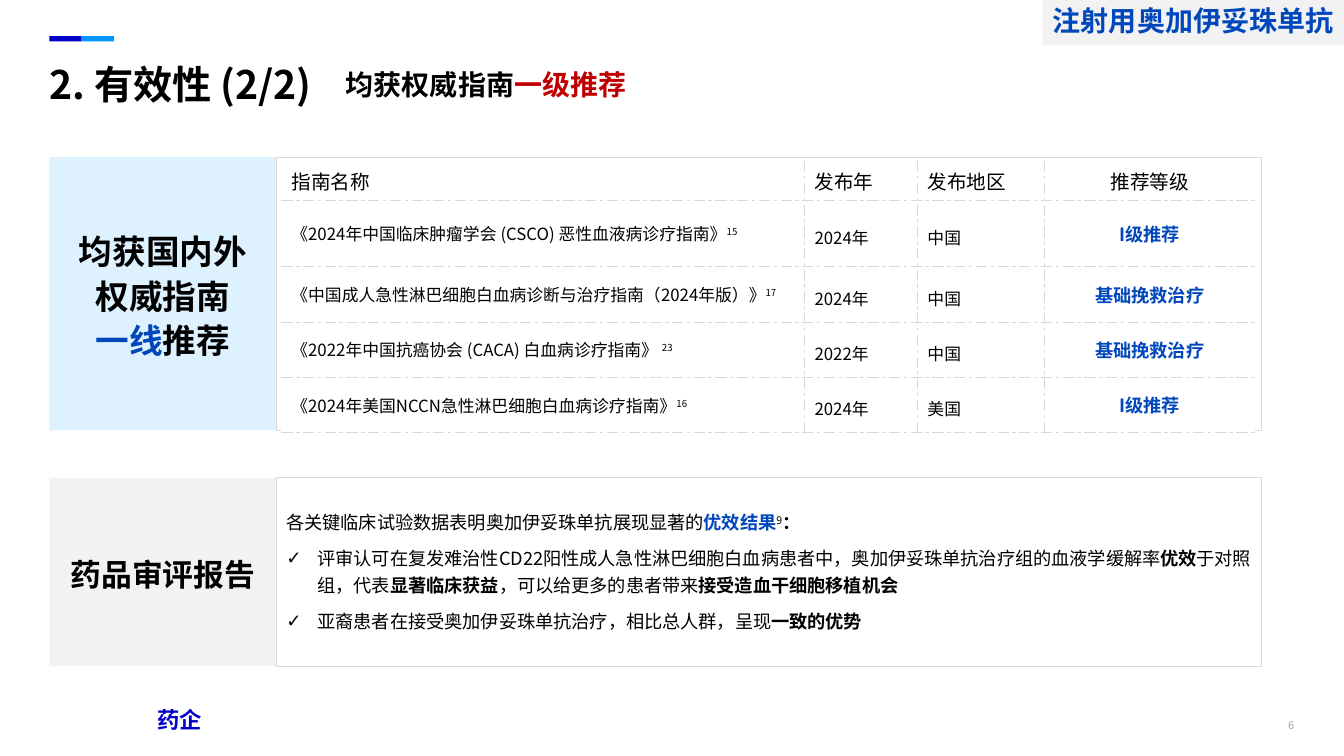
from dataclasses import dataclass
from typing import NamedTuple, Optional

from lxml.etree import SubElement
from pptx import Presentation
from pptx.dml.color import RGBColor
from pptx.enum.shapes import MSO_SHAPE as Shape
from pptx.enum.text import MSO_ANCHOR as Anchor, MSO_AUTO_SIZE as Fit, PP_ALIGN as Align
from pptx.oxml import parse_xml
from pptx.oxml.ns import nsdecls, qn
from pptx.util import Inches, Pt

HUES = {
    "ink": "000000", "blue": "0047BB", "red": "C00000", "deep": "0000C9",
    "sky": "0095FF", "pale": "DDF1FF", "grey": "F2F2F2", "line": "D9D9D9",
    "white": "FFFFFF", "dim": "A1AAB1",
}
HAN = "Noto Sans CJK SC"
WIDE, HIGH = Inches(13.33), Inches(7.5)


class Box(NamedTuple):
    """Left, top, width and height in percent of the slide."""
    x: float
    y: float
    w: float
    h: float

    def emu(self) -> tuple:
        return across(self.x), down(self.y), across(self.w), down(self.h)


class Run(NamedTuple):
    text: str
    size: float
    hue: str = "ink"
    bold: bool = False
    raised: bool = False
    face: str = HAN


@dataclass
class Para:
    runs: list
    align: Align = Align.LEFT
    space: float = 1.0
    before: float = 0
    mark: str = ""


@dataclass
class Panel:
    box: Box
    fill: str
    paras: tuple = ()
    line: Optional[str] = None
    side: float = 0.1


class Guide(NamedTuple):
    name: str
    note: str
    year: str
    place: str
    grade: str


def across(share: float) -> int:
    return round(WIDE * share / 100)


def down(share: float) -> int:
    return round(HIGH * share / 100)


def rgb(hue: str) -> RGBColor:
    return RGBColor.from_string(HUES[hue])


def write(frame, paras, anchor=Anchor.TOP, side: float = 0.1, edge: float = 0.05) -> None:
    frame.word_wrap = True
    frame.auto_size = Fit.NONE
    frame.vertical_anchor = anchor
    frame.margin_left = frame.margin_right = Inches(side)
    frame.margin_top = frame.margin_bottom = Inches(edge)
    fill_text(frame, paras)


def fill_text(frame, paras) -> None:
    for i, para in enumerate(paras):
        line = frame.add_paragraph() if i else frame.paragraphs[0]
        props = line._p.get_or_add_pPr()
        dent = Inches(0.31) if para.mark else 0
        props.set("marL", str(dent))
        props.set("indent", str(-dent))
        if para.mark:
            SubElement(props, qn("a:buChar")).set("char", para.mark)
        else:
            SubElement(props, qn("a:buNone"))
        line.alignment = para.align
        line.line_spacing = para.space
        line.space_before = Pt(para.before)
        for item in para.runs:
            add_run(line, item)


def add_run(line, item: Run) -> None:
    run = line.add_run()
    run.text = item.text
    font = run.font
    font.size, font.bold, font.name = Pt(item.size), item.bold, item.face
    font.color.rgb = rgb(item.hue)
    props = run._r.get_or_add_rPr()
    SubElement(props, qn("a:ea")).set("typeface", item.face)
    if item.raised:
        props.set("baseline", "30000")


def paint(shape, fill: str, line: Optional[str]) -> None:
    shape.fill.solid()
    shape.fill.fore_color.rgb = rgb(fill)
    if line:
        shape.line.color.rgb = rgb(line)
        shape.line.width = Pt(0.5)
    else:
        shape.line.fill.background()


def draw(slide, panel: Panel) -> None:
    shape = slide.shapes.add_shape(Shape.RECTANGLE, *panel.box.emu())
    shape.shadow.inherit = False
    paint(shape, panel.fill, panel.line)
    if panel.paras:
        write(shape.text_frame, panel.paras, Anchor.MIDDLE, panel.side)


def label(slide, box: Box, para: Para, anchor=Anchor.TOP, pad: float = 0.05) -> None:
    write(slide.shapes.add_textbox(*box.emu()).text_frame, [para], anchor, pad, pad)


def place(holder, box: Box) -> None:
    holder.left, holder.top, holder.width, holder.height = box.emu()


def rule(cell, shown: dict) -> None:
    """Draw dashed borders on the shown sides and clear the others."""
    props = cell._tc.get_or_add_tcPr()
    for i, (side, on) in enumerate(shown.items()):
        ink = (f'<a:solidFill><a:srgbClr val="{HUES["line"]}"/></a:solidFill>'
               '<a:prstDash val="sysDashDot"/>') if on else "<a:noFill/>"
        props.insert(i, parse_xml(f'<a:ln{side} {nsdecls("a")} w="6350">{ink}</a:ln{side}>'))


def guide_paras(guide: Guide) -> list:
    return [
        Para([Run(guide.name, 12), Run(guide.note, 12, raised=True)]),
        Para([Run(guide.year, 12)], space=1.3),
        Para([Run(guide.place, 12)], space=1.3),
        Para([Run(guide.grade, 13, "blue", True)], Align.CENTER),
    ]


def add_guides(slide, box: Box, cols: list, rows: list, heads: list, guides: list) -> None:
    grid = slide.shapes.add_table(len(rows), len(cols), *box.emu()).table
    grid.first_row = grid.horz_banding = False
    for col, share in zip(grid.columns, cols):
        col.width = across(share)
    for row, share in zip(grid.rows, rows):
        row.height = down(share)
    last = len(cols) - 1
    top = [Para([Run(head, 14)], Align.CENTER if c == last else Align.LEFT)
           for c, head in enumerate(heads)]
    for r, paras in enumerate([top] + [guide_paras(g) for g in guides]):
        for c, para in enumerate(paras):
            cell = grid.cell(r, c)
            cell.fill.solid()
            cell.fill.fore_color.rgb = rgb("white")
            cell.vertical_anchor = Anchor.MIDDLE
            if r and c == last:
                cell.margin_left = cell.margin_right = Inches(0.04)
                cell.margin_top = cell.margin_bottom = Inches(0.04)
            fill_text(cell.text_frame, [para])
            rule(cell, {"L": c > 0, "R": c < last, "T": r > 0, "B": True})


def main() -> None:
    deck = Presentation()
    deck.slide_width, deck.slide_height = WIDE, HIGH
    slide = deck.slides.add_slide(deck.slide_layouts[1])
    left, mid, tab, body = 3.68, 20.55, 16.87, 73.3
    upper, lower = (20.8, 36.13), (63.2, 24.93)

    title, review = slide.shapes.title, slide.placeholders[1]
    place(title, Box(left, 8.27, 94.75, 6.4))
    write(title.text_frame, [Para([Run("2. 有效性 (2/2)", 28, bold=True)], space=0.85)], side=0)
    place(review, Box(mid, lower[0], body, lower[1]))
    paint(review, "white", "line")
    write(review.text_frame, [
        Para([Run("各关键临床试验数据表明奥加伊妥珠单抗展现显著的", 13),
              Run("优效结果", 13, "blue", True), Run("9", 13, raised=True),
              Run("：", 13, bold=True)]),
        Para([Run("评审认可在复发难治性CD22阳性成人急性淋巴细胞白血病患者中，"
                  "奥加伊妥珠单抗治疗组的血液学缓解率", 13),
              Run("优效", 13, bold=True), Run("于对照组，代表", 13),
              Run("显著临床获益", 13, bold=True), Run("，可以给更多的患者带来", 13),
              Run("接受造血干细胞移植机会", 13, bold=True)], space=1.25, before=6, mark="✓"),
        Para([Run("亚裔患者在接受奥加伊妥珠单抗治疗，相比总人群，呈现", 13),
              Run("一致的优势", 13, bold=True)], space=1.25, before=6, mark="✓"),
    ], Anchor.MIDDLE)

    claim = [[Run("均获国内外", 24, bold=True)], [Run("权威指南", 24, bold=True)],
             [Run("一线", 24, "blue", True), Run("推荐", 24, bold=True)]]
    drug = Para([Run("注射用奥加伊妥珠单抗", 20, "blue", True)], Align.CENTER, 0.9)
    report = Para([Run("药品审评报告", 22, bold=True)], Align.CENTER, 1.1)
    for panel in (
        Panel(Box(left, 4.8, 2.4, 0.67), "deep"),
        Panel(Box(left + 2.4, 4.8, 2.4, 0.67), "sky"),
        Panel(Box(77.57, 0, 22.43, 6), "grey", (drug,)),
        Panel(Box(left, upper[0], tab, upper[1]), "pale",
              tuple(Para(runs, Align.CENTER, 1.1) for runs in claim), side=0.04),
        Panel(Box(mid, upper[0], body, upper[1]), "white", line="line"),
        Panel(Box(left, lower[0], tab, lower[1]), "grey", (report,)),
    ):
        draw(slide, panel)

    label(slide, Box(25.36, 8.8, 67.89, 8.13), Para(
        [Run("均获权威指南", 20, bold=True), Run("一级推荐", 20, "red", True)], space=0.9))
    label(slide, Box(11.33, 93.2, 6, 3.87), Para([Run("药企", 16, "deep", True)], space=0.9))
    label(slide, Box(94.07, 91.87, 2.25, 4.93), Para(
        [Run("6", 8, "dim", face="Arial")], Align.RIGHT, 0.9), Anchor.BOTTOM, 0)

    add_guides(
        slide, Box(20.93, 21.33, 72.46, 35.6), [38.93, 8.4, 9.45, 15.68],
        [4.8, 8.8] + [7.33] * 3, ["指南名称", "发布年", "发布地区", "推荐等级"], [
            Guide("《2024年中国临床肿瘤学会 (CSCO) 恶性血液病诊疗指南》", "15", "2024年", "中国", "I级推荐"),
            Guide("《中国成人急性淋巴细胞白血病诊断与治疗指南（2024年版）》", "17", "2024年", "中国", "基础挽救治疗"),
            Guide("《2022年中国抗癌协会 (CACA) 白血病诊疗指南》 ", "23", "2022年", "中国", "基础挽救治疗"),
            Guide("《2024年美国NCCN急性淋巴细胞白血病诊疗指南》", "16", "2024年", "美国", "I级推荐"),
        ])
    deck.save("out.pptx")


if __name__ == "__main__":
    main()
